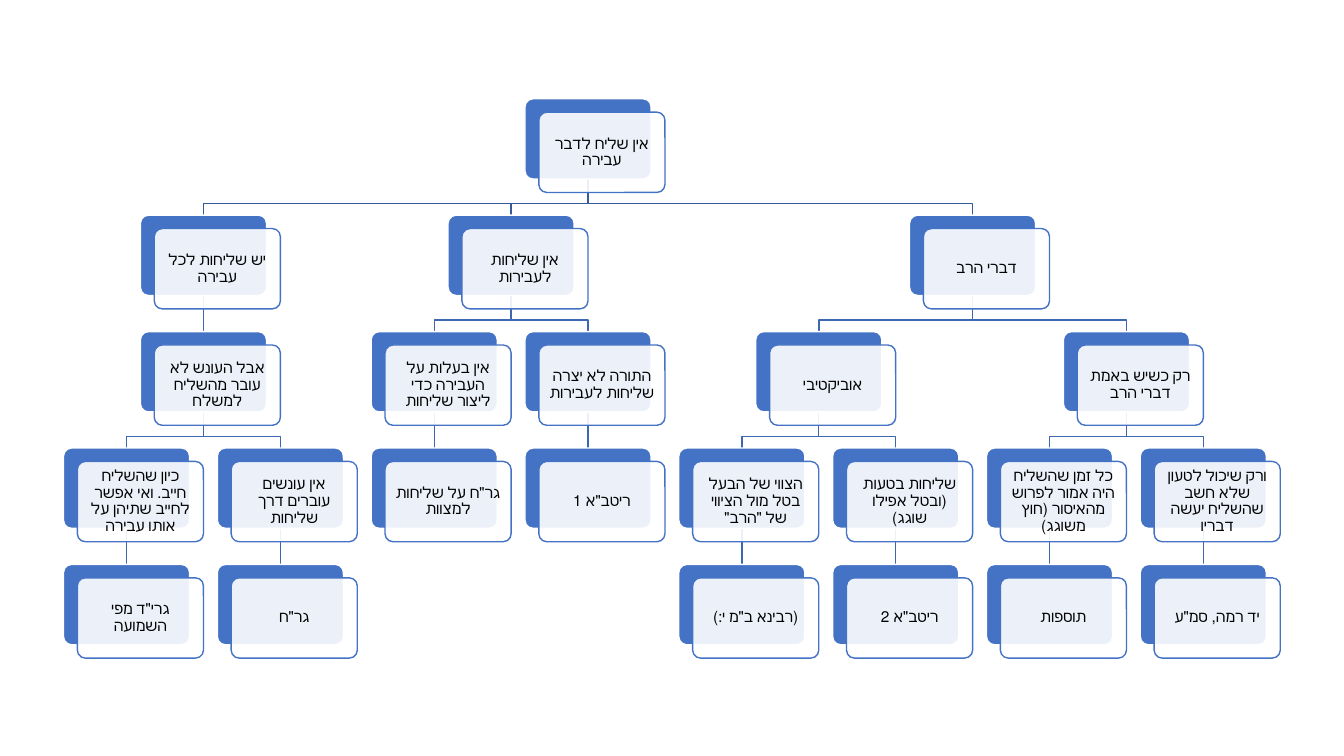
from dataclasses import dataclass

from lxml import etree
from pptx import Presentation
from pptx.dml.color import RGBColor
from pptx.enum.shapes import MSO_CONNECTOR, MSO_SHAPE
from pptx.enum.text import MSO_ANCHOR, PP_ALIGN
from pptx.oxml.ns import qn
from pptx.util import Inches, Pt

ROUNDED = MSO_SHAPE.ROUNDED_RECTANGLE
STRAIGHT = MSO_CONNECTOR.STRAIGHT
CENTER = PP_ALIGN.CENTER
MIDDLE = MSO_ANCHOR.MIDDLE

# The grid starts at the first leaf column and the top row.
LEFT, TOP = 0.63, 0.98
COLUMN = (11.31 - LEFT) / 7
ROW = (5.60 - TOP) / 4

# Card measures, in columns and rows.
CARD_WIDTH, CARD_HEIGHT = 0.82, 0.69
SHIFT_ACROSS, SHIFT_DOWN = 0.09, 0.115
ELBOW_RISE = 0.1


@dataclass
class Theme:
    card: RGBColor = RGBColor(0x44, 0x72, 0xC4)
    paper: RGBColor = RGBColor(0xFF, 0xFF, 0xFF)
    text: RGBColor = RGBColor(0, 0, 0)
    top_branch: RGBColor = RGBColor(0x36, 0x5B, 0x9D)
    branch: RGBColor = RGBColor(0x3E, 0x67, 0xB2)
    font: str = "Calibri"
    size: Pt = Pt(11)
    space_after: Pt = Pt(3.85)
    line_width: Pt = Pt(1)
    inset: Inches = Inches(0.07)
    paper_opacity: int = 90


@dataclass
class Topic:
    text: str
    children: tuple = ()
    column: float = 0
    row: int = 0


def topic(text, *children):
    return Topic(text, children)


TREE = topic(
    "אין שליח לדבר עבירה",
    topic(
        "יש שליחות לכל עבירה",
        topic(
            "אבל העונש לא עובר מהשליח למשלח",
            topic("כיון שהשליח חייב. ואי אפשר לחייב שתיהן על אותו עבירה",
                  topic('גרי"ד מפי השמועה')),
            topic("אין עונשים עוברים דרך שליחות", topic('גר"ח')),
        ),
    ),
    topic(
        "אין שליחות לעבירות",
        topic("אין בעלות על העבירה כדי ליצור שליחות",
              topic('גר"ח על שליחות למצוות')),
        topic("התורה לא יצרה שליחות לעבירות", topic('ריטב"א 1')),
    ),
    topic(
        "דברי הרב",
        topic(
            "אוביקטיבי",
            topic('הצווי של הבעל בטל מול הציווי של "הרב"',
                  topic('(רבינא ב"מ י:)')),
            topic("שליחות בטעות (ובטל אפילו שוגג)", topic('ריטב"א 2')),
        ),
        topic(
            "רק כשיש באמת דברי הרב",
            topic("כל זמן שהשליח היה אמור לפרוש מהאיסור (חוץ משוגג)",
                  topic("תוספות")),
            topic("ורק שיכול לטעון שלא חשב שהשליח יעשה דבריו",
                  topic('יד רמה, סמ"ע')),
        ),
    ),
)


def arrange(node, row=0, next_column=0):
    """Place leaves in successive columns and parents midway; return the next free column."""
    node.row = row
    if not node.children:
        node.column = next_column
        return next_column + 1
    for child in node.children:
        next_column = arrange(child, row + 1, next_column)
    node.column = (node.children[0].column + node.children[-1].column) / 2
    return next_column


def walk(node):
    yield node
    for child in node.children:
        yield from walk(child)


def point(column, row):
    return Inches(LEFT + column * COLUMN), Inches(TOP + row * ROW)


class TreeSlide:
    def __init__(self, slide, theme):
        self.slide = slide
        self.theme = theme

    def branch(self, parent, child):
        color = self.theme.branch if parent.row else self.theme.top_branch
        start_column = parent.column + CARD_WIDTH / 2
        end_column = child.column + CARD_WIDTH / 2
        start = point(start_column, parent.row + CARD_HEIGHT)
        end = point(end_column, child.row)
        if start_column == end_column:
            line = self.slide.shapes.add_connector(STRAIGHT, *start, *end)
            etree.SubElement(line.element.spPr, qn("a:effectLst"))
        else:
            elbow_row = child.row - ELBOW_RISE
            builder = self.slide.shapes.build_freeform(*start)
            builder.add_line_segments(
                [point(start_column, elbow_row), point(end_column, elbow_row), end],
                close=False)
            line = builder.convert_to_shape()
            line.fill.background()
            line.shadow.inherit = False
        line.line.color.rgb = color
        line.line.width = self.theme.line_width

    def panel(self, column, row, fill, outline):
        shape = self.slide.shapes.add_shape(
            ROUNDED, *point(column, row),
            Inches(CARD_WIDTH * COLUMN), Inches(CARD_HEIGHT * ROW))
        shape.adjustments[0] = 0.1
        shape.shadow.inherit = False
        shape.fill.solid()
        shape.fill.fore_color.rgb = fill
        shape.line.color.rgb = outline
        shape.line.width = self.theme.line_width
        return shape

    def card(self, node):
        theme = self.theme
        self.panel(node.column, node.row, theme.card, theme.paper)
        front = self.panel(node.column + SHIFT_ACROSS, node.row + SHIFT_DOWN,
                           theme.paper, theme.card)
        fill_color = front.element.spPr.find(qn("a:solidFill"))[0]
        etree.SubElement(fill_color, qn("a:alpha"), val=str(theme.paper_opacity * 1000))
        self.label(front.text_frame, node.text)

    def label(self, frame, text):
        theme = self.theme
        frame.word_wrap = True
        frame.vertical_anchor = MIDDLE
        frame.margin_left = frame.margin_right = theme.inset
        frame.margin_top = frame.margin_bottom = theme.inset
        paragraph = frame.paragraphs[0]
        paragraph.alignment = CENTER
        paragraph.line_spacing = 0.9
        paragraph.space_after = theme.space_after
        paragraph._p.get_or_add_pPr().set("rtl", "1")
        run = paragraph.add_run()
        run.text = text
        run.font.name = theme.font
        run.font.size = theme.size
        run.font.color.rgb = theme.text


def main():
    presentation = Presentation()
    presentation.slide_width = Inches(13.33)
    presentation.slide_height = Inches(7.5)
    slide = presentation.slides.add_slide(presentation.slide_layouts[6])
    tree_slide = TreeSlide(slide, Theme())
    arrange(TREE)
    for node in walk(TREE):
        for child in node.children:
            tree_slide.branch(node, child)
    for node in walk(TREE):
        tree_slide.card(node)
    presentation.save("out.pptx")


if __name__ == "__main__":
    main()
